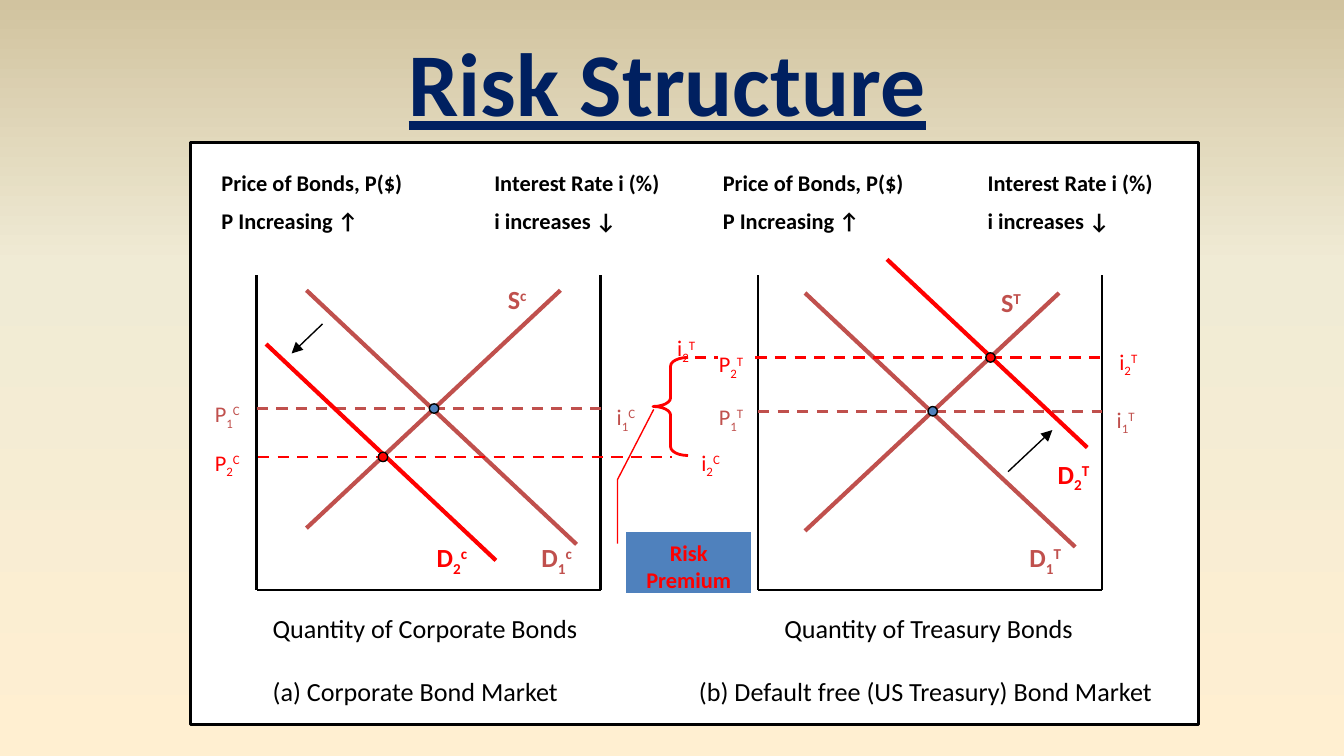
from copy import deepcopy
from dataclasses import dataclass

from pptx import Presentation
from pptx.dml.color import RGBColor
from pptx.enum.dml import MSO_LINE_DASH_STYLE as DASH
from pptx.enum.shapes import MSO_CONNECTOR, MSO_SHAPE
from pptx.enum.text import MSO_ANCHOR, PP_ALIGN
from pptx.oxml.ns import qn
from pptx.oxml.xmlchemy import OxmlElement
from pptx.util import Inches, Pt


@dataclass(frozen=True)
class Theme:
    font: str = "Calibri"
    black: str = "000000"
    white: str = "FFFFFF"
    navy: str = "002060"
    before: str = "C0504D"
    after: str = "FF0000"
    blue: str = "4F81BD"
    background: tuple = ((0, "FFEFD1"), (0.65, "F0EBD5"), (1, "D1C39F"))
    title: int = 48
    large: int = 14
    small: int = 12


@dataclass(frozen=True)
class Market:
    """One bond market; the curves hang from (curve_x, curve_y)."""
    sign: str
    axis_x: float
    curve_x: float
    curve_y: float
    price_x: float
    rate_x: float
    headings: tuple
    caption: tuple
    caption_box: tuple
    caption_align: PP_ALIGN
    demand_2: tuple
    shift_arrow: tuple
    price_line_2: tuple
    dot_2_x: float
    rate_2: tuple
    price_2_y: float
    supply_label_dx: float
    demand_label_x: float
    demand_2_label: tuple


T = Theme()
AXIS_TOP, AXIS_BOTTOM, AXIS_WIDTH = 2.05, 4.39, 2.56
DOT = 0.07
SYMBOL_SIZES = {"D": (0.58, 0.34), "S": (0.46, 0.34),
                "P": (0.5, 0.3), "i": (0.38, 0.21)}

CORPORATE = Market(
    sign="C", axis_x=1.91, curve_x=2.28, curve_y=2.16, price_x=1.5, rate_x=4.49,
    headings=((1.55, 1.7), (3.58, 1.43)),
    caption=("Quantity of Corporate Bonds", "(a) Corporate Bond Market"),
    caption_box=(1.93, 4.51, 2.82, 0.81), caption_align=PP_ALIGN.LEFT,
    demand_2=(1.98, 2.56, 3.69, 4.17), shift_arrow=(2.4, 2.41, 2.17, 2.63),
    price_line_2=(1.92, 3.4, 5, 3.4), dot_2_x=2.85,
    rate_2=(5.12, 3.29), price_2_y=3.29,
    supply_label_dx=1.4, demand_label_x=3.93, demand_2_label=(3.15, 3.98))

TREASURY = Market(
    sign="T", axis_x=5.64, curve_x=5.99, curve_y=2.18, price_x=5.25, rate_x=8.21,
    headings=((5.28, 1.55), (7.25, 1.5)),
    caption=("Quantity of Treasury Bonds",
             "(b) Default free (US Treasury) Bond Market "),
    caption_box=(4.99, 4.51, 3.84, 0.81), caption_align=PP_ALIGN.CENTER,
    demand_2=(6.6, 1.93, 8.09, 3.33), shift_arrow=(7.5, 3.51, 7.83, 3.2),
    price_line_2=(5.62, 2.66, 8.22, 2.66), dot_2_x=7.37,
    rate_2=(8.23, 2.54), price_2_y=2.56,
    supply_label_dx=1.36, demand_label_x=7.56, demand_2_label=(7.77, 3.36))


def rgb(color):
    return RGBColor.from_string(color)


def paint_background(s):
    fill = s.background.fill
    fill.gradient()
    fill.gradient_angle = 90
    stops = s.element.find(".//" + qn("a:gsLst"))
    stops.append(deepcopy(stops[0]))
    for stop, (position, color) in zip(fill.gradient_stops, T.background):
        stop.position = position
        stop.color.rgb = rgb(color)


def set_font(p, size, color, bold=False):
    p.font.name = T.font
    p.font.size = Pt(size)
    p.font.bold = bold
    p.font.color.rgb = rgb(color)


def add_text(s, box, lines, size, color=T.black, bold=False,
             align=PP_ALIGN.LEFT, gap=0, wrap=True):
    tf = s.shapes.add_textbox(*map(Inches, box)).text_frame
    tf.word_wrap = wrap
    for i, line in enumerate(lines):
        p = tf.add_paragraph() if i else tf.paragraphs[0]
        p.text = line
        p.alignment = align
        p.space_before = Pt(gap if i else 0)
        set_font(p, size, color, bold)
    return tf


def add_symbol(s, at, base, sub, sup, color, size=T.small, bold=False):
    """Letter with a subscript and a superscript."""
    tf = add_text(s, (*at, *SYMBOL_SIZES[base]), [base], size, color, bold)
    for text, baseline in ((sub, -25000), (sup, 30000)):
        if text:
            r = tf.paragraphs[0].add_run()
            r.text = text
            r.font._element.set("baseline", str(baseline))


def add_line(s, ends, color, width, dashed=False, arrow=False):
    line = s.shapes.add_connector(MSO_CONNECTOR.STRAIGHT, *map(Inches, ends))
    line.line.color.rgb = rgb(color)
    line.line.width = Pt(width)
    if dashed:
        line.line.dash_style = DASH.DASH
    if arrow:
        tail = OxmlElement("a:tailEnd")
        tail.set("type", "triangle")
        line.line._get_or_add_ln().append(tail)
    line._element.spPr.append(OxmlElement("a:effectLst"))


def add_figure(s, kind, box, fill, line, width, adjustments=()):
    sp = s.shapes.add_shape(kind, *map(Inches, box))
    sp.shadow.inherit = False
    if fill:
        sp.fill.solid()
        sp.fill.fore_color.rgb = rgb(fill)
    else:
        sp.fill.background()
    sp.line.color.rgb = rgb(line)
    sp.line.width = Pt(width)
    for i, value in enumerate(adjustments):
        sp.adjustments[i] = value
    return sp


def add_dot(s, x, y, fill):
    add_figure(s, MSO_SHAPE.OVAL, (x - DOT / 2, y - DOT / 2, DOT, DOT),
               fill, T.black, 0.75)


def add_market(s, m):
    left, right = m.axis_x, m.axis_x + AXIS_WIDTH
    x, y = m.curve_x, m.curve_y
    price_1, price_2 = y + 0.88, m.price_line_2[1]
    curve_sign = "c" if m.sign == "C" else m.sign

    for ends in ((left, AXIS_TOP, left, AXIS_BOTTOM),
                 (left, AXIS_BOTTOM, right, AXIS_BOTTOM),
                 (right, AXIS_TOP, right, AXIS_BOTTOM)):
        add_line(s, ends, T.black, 1.5)
    headings = (("Price of Bonds, P($)", "P Increasing ↑"),
                ("Interest Rate i (%)", "i increases ↓"))
    for (at, width), lines in zip(m.headings, headings):
        add_text(s, (at, 1.21, width, 0.61), lines, T.small, bold=True, gap=6)
    add_text(s, m.caption_box, m.caption, T.large,
             align=m.caption_align, gap=16.5)

    add_line(s, (x, y, x + 2.01, y + 1.89), T.before, 2.25)
    add_line(s, (x, y + 1.77, x + 1.89, y), T.before, 2.25)
    add_line(s, (left, price_1, right, price_1), T.before, 1.5, dashed=True)
    add_dot(s, x + 0.95, price_1, T.blue)
    add_line(s, m.demand_2, T.after, 2.25)
    add_line(s, m.shift_arrow, T.black, 0.75, arrow=True)
    add_line(s, m.price_line_2, T.after, 1.5, dashed=True)
    add_dot(s, m.dot_2_x, price_2, T.after)

    for at, base, sub, color in (
            ((x + m.supply_label_dx, y - 0.1), "S", "", T.before),
            ((m.demand_label_x, 3.98), "D", "1", T.before),
            (m.demand_2_label, "D", "2", T.after)):
        add_symbol(s, at, base, sub, curve_sign, color, T.large, bold=True)
    for at, base, sub, color in (
            ((m.price_x, y + 0.77), "P", "1", T.before),
            ((m.rate_x, y + 0.79), "i", "1", T.before),
            ((m.price_x, m.price_2_y), "P", "2", T.after),
            (m.rate_2, "i", "2", T.after)):
        add_symbol(s, at, base, sub, m.sign, color)


def add_risk_premium(s):
    sp = add_figure(s, MSO_SHAPE.LINE_CALLOUT_3_NO_BORDER,
                    (4.66, 3.96, 0.93, 0.45), T.blue, T.after, 0.75,
                    (0.19, -0.07, 0.19, -0.07, -0.87, -0.07, -2.03, 0.22))
    tf = sp.text_frame
    tf.word_wrap = True
    tf.vertical_anchor = MSO_ANCHOR.TOP
    p = tf.paragraphs[0]
    p.text = "Risk Premium"
    p.alignment = PP_ALIGN.CENTER
    set_font(p, T.small, T.after, bold=True)
    add_figure(s, MSO_SHAPE.LEFT_BRACE, (4.86, 2.66, 0.26, 0.73),
               None, T.after, 1.5, (0.25, 0.5))
    add_line(s, (5.17, 2.66, 5.34, 2.66), T.after, 1.5, dashed=True)
    add_symbol(s, (4.94, 2.44), "i", "2", "T", T.after)


def main():
    prs = Presentation()
    prs.slide_width = Inches(10)
    prs.slide_height = prs.slide_width * 9 // 16
    s = prs.slides.add_slide(prs.slide_layouts[6])
    paint_background(s)
    title = add_text(s, (2.92, 0.15, 4.09, 0.91), ["Risk Structure"], T.title,
                     T.navy, bold=True, align=PP_ALIGN.CENTER, wrap=False)
    title.paragraphs[0].font.underline = True
    add_figure(s, MSO_SHAPE.RECTANGLE, (1.42, 1.06, 7.5, 4.33),
               T.white, T.black, 1.75)
    for market in (CORPORATE, TREASURY):
        add_market(s, market)
    add_risk_premium(s)
    prs.save("out.pptx")


if __name__ == "__main__":
    main()
